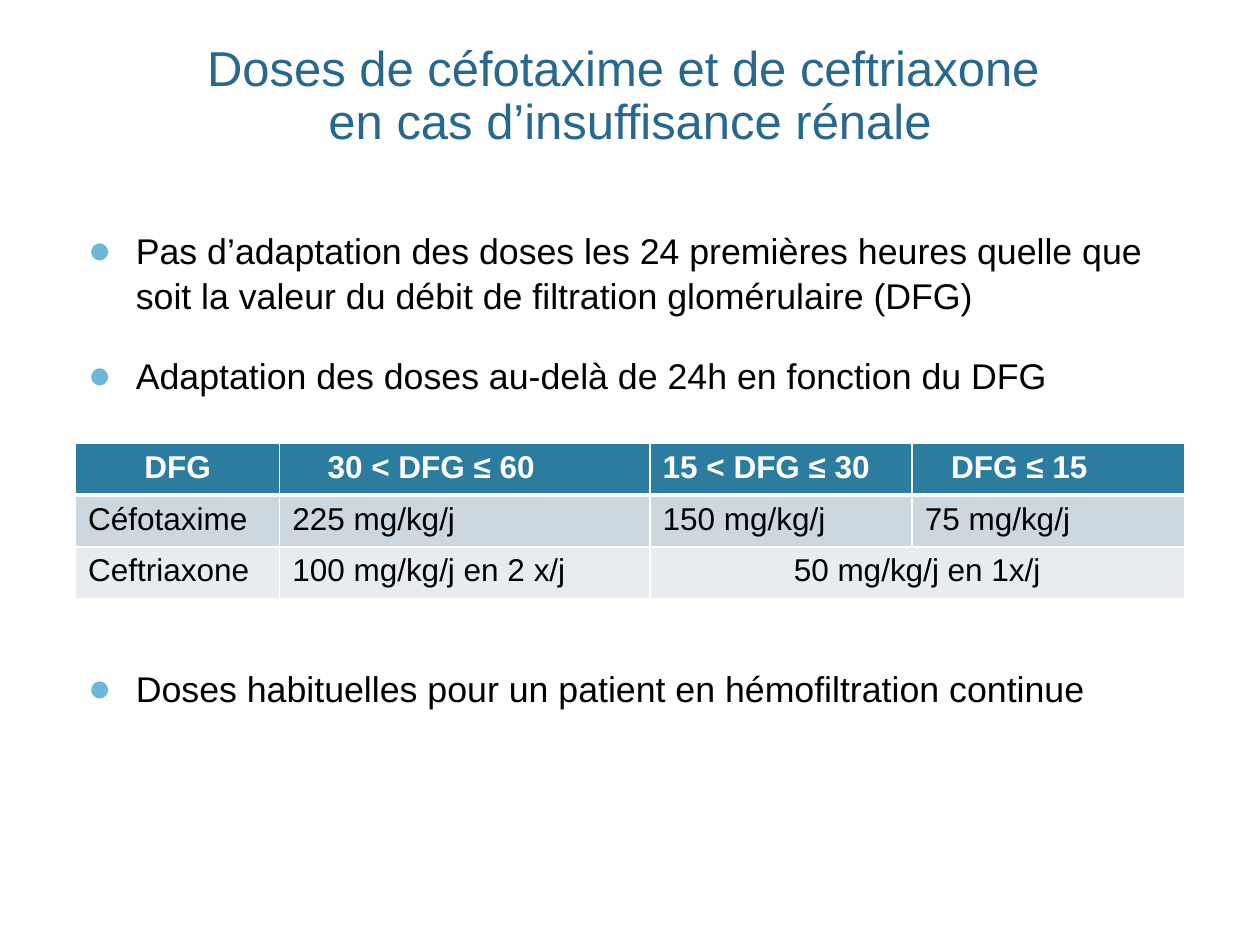
from dataclasses import dataclass

from lxml import etree
from pptx import Presentation
from pptx.dml.color import RGBColor
from pptx.enum import text
from pptx.oxml.ns import qn
from pptx.util import Inches, Pt


@dataclass(frozen=True)
class Theme:
    font: str = "Arial"
    title: str = "28688E"
    ink: str = "000000"
    white: str = "FFFFFF"
    bullet: str = "6FB7D7"
    rows: tuple = ("2C7C9F", "CDD7DF", "E8ECF0")
    title_size: float = 28
    body_size: float = 20.4
    table_size: float = 18


THEME = Theme()

# Content
TITLE = ["Doses de céfotaxime et de ceftriaxone ", "en cas d’insuffisance rénale"]
POINTS = [  # wording, space before in points
    ("Pas d’adaptation des doses les 24 premières heures quelle que "
     "soit la valeur du débit de filtration glomérulaire (DFG)", 0),
    ("Adaptation des doses au-delà de 24h en fonction du DFG", 20),
    ("Doses habituelles pour un patient en hémofiltration continue", 153),
]
DOSES = [
    ["DFG", "30 < DFG ≤ 60", "15 < DFG ≤ 30", "DFG ≤ 15"],
    ["Céfotaxime", "225 mg/kg/j", "150 mg/kg/j", "75 mg/kg/j"],
    ["Ceftriaxone", "100 mg/kg/j en 2 x/j", "50 mg/kg/j en 1x/j"],
]
CENTRED = {(0, 0), (2, 2)}
HEADER_INDENTS = [0, 0.28, 0, 0.21]

# Layout
LEFT, WIDTH = 0.6, 8.8
COLUMNS = [1.62, 2.94, 2.08, 2.16]
ROW_HEIGHT = 0.41
HANG = 0.38


def add_run(paragraph, words, size, color, bold=False):
    run = paragraph.add_run()
    run.text = words
    run.font.name = THEME.font
    run.font.size = Pt(size)
    run.font.bold = bold
    run.font.color.rgb = RGBColor.from_string(color)


def add_bullet(paragraph):
    props = paragraph._p.get_or_add_pPr()
    props.set("marL", str(Inches(HANG)))
    props.set("indent", str(-Inches(HANG)))
    color = etree.SubElement(props, qn("a:buClr"))
    etree.SubElement(color, qn("a:srgbClr"), val=THEME.bullet)
    etree.SubElement(props, qn("a:buSzPct"), val="110000")
    etree.SubElement(props, qn("a:buFont"), typeface=THEME.font)
    etree.SubElement(props, qn("a:buChar"), char="●")


def set_borders(cell, widths):
    props = cell._tc.get_or_add_tcPr()
    for position, (side, width) in enumerate(widths.items()):
        line = etree.Element(qn(f"a:ln{side}"), w=str(Pt(width)))
        fill = etree.SubElement(line, qn("a:solidFill"))
        etree.SubElement(fill, qn("a:srgbClr"), val=THEME.white)
        props.insert(position, line)


def add_title(slide):
    title = slide.shapes.title
    title.left, title.top = Inches(LEFT), Inches(0.22)
    title.width, title.height = Inches(WIDTH), Inches(1.02)
    frame = title.text_frame
    frame.auto_size = text.MSO_AUTO_SIZE.NONE
    frame.vertical_anchor = text.MSO_ANCHOR.BOTTOM
    heading = frame.paragraphs[0]
    heading.alignment = text.PP_ALIGN.CENTER
    heading.line_spacing = 0.9
    for number, line in enumerate(TITLE):
        if number:
            heading.add_line_break()
        add_run(heading, line, THEME.title_size, THEME.title)


def add_points(slide):
    body = slide.shapes.add_textbox(Inches(LEFT), Inches(1.75), Inches(WIDTH), Inches(4.22))
    frame = body.text_frame
    frame.word_wrap = True
    for number, (words, gap) in enumerate(POINTS):
        point = frame.add_paragraph() if number else frame.paragraphs[0]
        add_bullet(point)
        point.line_spacing = 1.05
        if gap:
            point.space_before = Pt(gap)
        add_run(point, words, THEME.body_size, THEME.ink)


def add_doses(slide):
    table = slide.shapes.add_table(
        len(DOSES), len(COLUMNS), Inches(LEFT), Inches(3.52),
        Inches(WIDTH), Inches(ROW_HEIGHT * len(DOSES))).table
    for column, width in zip(table.columns, COLUMNS):
        column.width = Inches(width)
    for row in table.rows:
        row.height = Inches(ROW_HEIGHT)
    table.cell(2, 2).merge(table.cell(2, 3))

    # Fills and borders, with a thicker rule under the header
    for r, fill in enumerate(THEME.rows):
        for c in range(len(COLUMNS)):
            cell = table.cell(r, c)
            cell.fill.solid()
            cell.fill.fore_color.rgb = RGBColor.from_string(fill)
            set_borders(cell, {"L": 1, "R": 1, "T": 3 if r == 1 else 1, "B": 3 if r == 0 else 1})

    # Wording
    for r, row in enumerate(DOSES):
        header = r == 0
        for c, words in enumerate(row):
            cell = table.cell(r, c)
            if header:
                cell.margin_left = Inches(0.1 + HEADER_INDENTS[c])
            entry = cell.text_frame.paragraphs[0]
            if (r, c) in CENTRED:
                entry.alignment = text.PP_ALIGN.CENTER
            add_run(entry, words, THEME.table_size, THEME.white if header else THEME.ink, header)


def main():
    deck = Presentation()
    deck.slide_width, deck.slide_height = Inches(10), Inches(7.5)
    slide = deck.slides.add_slide(deck.slide_layouts[5])
    add_title(slide)
    add_points(slide)
    add_doses(slide)
    deck.save("out.pptx")


if __name__ == "__main__":
    main()
